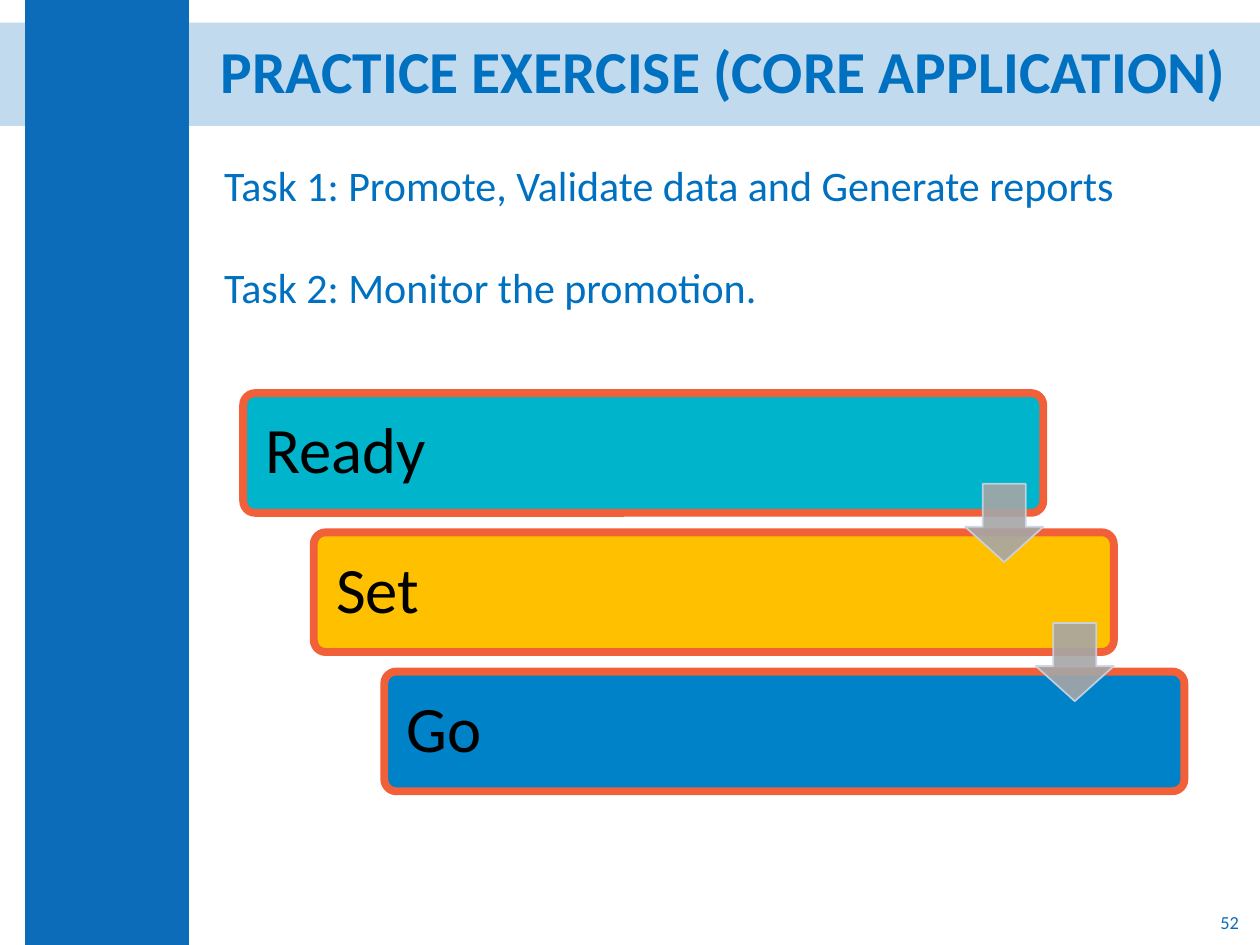
from lxml import etree
from pptx import Presentation
from pptx import util as u
from pptx.dml.color import RGBColor
from pptx.enum import shapes, text
from pptx.oxml.ns import qn

TITLE = "PRACTICE EXERCISE (CORE APPLICATION)"
TASKS = [
    "Task 1: Promote, Validate data and Generate reports",
    "Task 2: Monitor the promotion.",
]
STEPS = [("Ready", "00B4CB"), ("Set", "FFC000"), ("Go", "0082C8")]
PAGE = "52"

THEME = {
    "font": "Calibri",
    "brand": "0D6CB9",
    "heading": "0070C0",
    "step_text": "000000",
    "step_line": "F16038",
    "arrow": "A6A6A6",
    "arrow_line": "CCD4E6",
    "title_size": 34,
    "task_size": 24,
    "step_size": 37,
    "page_size": 10.5,
}

STEP_LEFT, STEP_TOP, STEP_WIDTH, STEP_HEIGHT = 1.93, 3.12, 6.35, 0.95
SHIFT_X, SHIFT_Y = 0.56, 1.105
ARROW_SIZE, ARROW_RISE = 0.62, 0.23


def set_color(fill, color, opacity=100):
    fill.solid()
    fill.fore_color.rgb = RGBColor.from_string(color)
    if opacity < 100:
        for clr in fill._xPr.find(qn("a:solidFill")):
            etree.SubElement(clr, qn("a:alpha"), val=str(opacity * 1000))


def add_block(slide, kind, box, color, opacity=100, line=None, line_width=1, adjust=()):
    block = slide.shapes.add_shape(kind, *map(u.Inches, box))
    block.shadow.inherit = False
    set_color(block.fill, color, opacity)
    if line:
        set_color(block.line.fill, line, opacity)
        block.line.width = u.Pt(line_width)
    else:
        block.line.fill.background()
    for index, value in enumerate(adjust):
        block.adjustments[index] = value
    return block


def write(frame, lines, size, color, bold=False, anchor=text.MSO_ANCHOR.MIDDLE, gap=0, **layout):
    frame.word_wrap = True
    frame.vertical_anchor = anchor
    font_format = {"name": THEME["font"], "size": u.Pt(size), "bold": bold}
    for index, line in enumerate(lines):
        paragraph = frame.add_paragraph() if index else frame.paragraphs[0]
        if index:
            paragraph.space_before = u.Pt(gap)
        for key, value in layout.items():
            setattr(paragraph, key, value)
        run = paragraph.add_run()
        run.text = line
        for key, value in font_format.items():
            setattr(run.font, key, value)
        run.font.color.rgb = RGBColor.from_string(color)


def add_text(slide, box, *args, **kwargs):
    write(slide.shapes.add_textbox(*map(u.Inches, box)).text_frame, *args, **kwargs)


def add_steps(slide):
    for index, (label, color) in enumerate(STEPS):
        box = (STEP_LEFT + index * SHIFT_X, STEP_TOP + index * SHIFT_Y, STEP_WIDTH, STEP_HEIGHT)
        step = add_block(slide, shapes.MSO_SHAPE.ROUNDED_RECTANGLE, box, color,
                         line=THEME["step_line"], line_width=4.5, adjust=[0.1])
        for side in ("left", "right", "top", "bottom"):
            setattr(step.text_frame, f"margin_{side}", u.Inches(0.15))
        write(step.text_frame, [label], THEME["step_size"], THEME["step_text"],
              alignment=text.PP_ALIGN.LEFT, line_spacing=0.9)

    for index in range(len(STEPS) - 1):
        right = STEP_LEFT + index * SHIFT_X + STEP_WIDTH
        bottom = STEP_TOP + index * SHIFT_Y + STEP_HEIGHT
        box = (right - ARROW_SIZE, bottom - ARROW_RISE, ARROW_SIZE, ARROW_SIZE)
        add_block(slide, shapes.MSO_SHAPE.DOWN_ARROW, box, THEME["arrow"], 90,
                  line=THEME["arrow_line"], adjust=[0.55, 0.45])


def main():
    deck = Presentation()
    deck.slide_width, deck.slide_height = u.Inches(10), u.Inches(7.5)
    slide = deck.slides.add_slide(deck.slide_layouts[6])

    add_block(slide, shapes.MSO_SHAPE.RECTANGLE, (0, 0.18, 10, 0.82), THEME["brand"], 25)
    add_block(slide, shapes.MSO_SHAPE.RECTANGLE, (0.2, 0, 1.3, 7.5), THEME["brand"])
    add_text(slide, (1.48, 0.18, 8.52, 0.82), [TITLE], THEME["title_size"], THEME["heading"],
             bold=True, alignment=text.PP_ALIGN.CENTER, line_spacing=0.9)
    add_text(slide, (7.68, 7.17, 2.25, 0.3), [PAGE], THEME["page_size"], THEME["brand"],
             alignment=text.PP_ALIGN.RIGHT)
    add_steps(slide)
    add_text(slide, (1.68, 1.22, 8.15, 1.44), TASKS, THEME["task_size"], THEME["heading"],
             anchor=text.MSO_ANCHOR.TOP, gap=29)

    deck.save("out.pptx")


if __name__ == "__main__":
    main()
